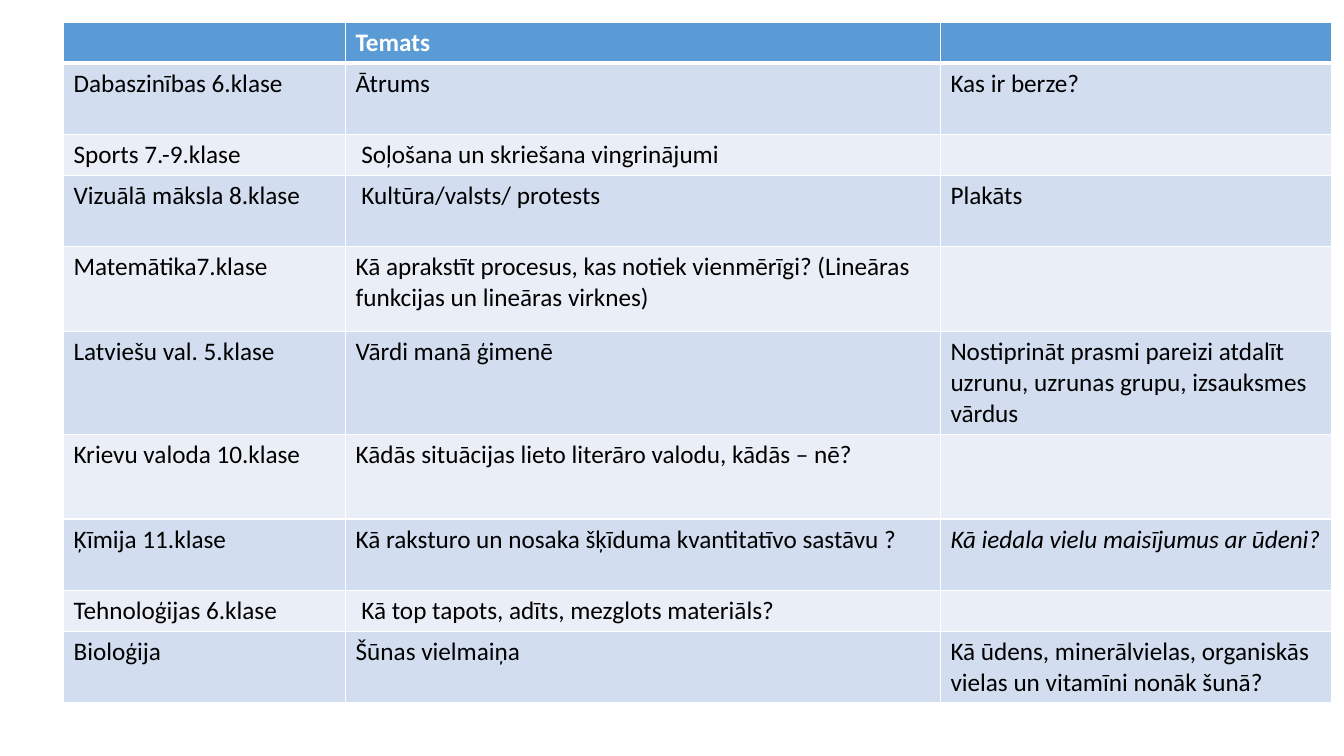
from lxml import etree
from pptx import Presentation
from pptx.dml.color import RGBColor
from pptx.oxml.ns import qn
from pptx.util import Cm, Pt

HEADER = ("", "Temats", "")
TOPICS = [
    ("Dabaszinības 6.klase", "Ātrums", "Kas ir berze?"),
    ("Sports 7.-9.klase", " Soļošana un skriešana vingrinājumi", ""),
    ("Vizuālā māksla 8.klase", " Kultūra/valsts/ protests", "Plakāts"),
    ("Matemātika7.klase",
     "Kā aprakstīt procesus, kas notiek vienmērīgi? (Lineāras funkcijas un lineāras virknes)", ""),
    ("Latviešu val. 5.klase", "Vārdi manā ģimenē",
     "Nostiprināt prasmi pareizi atdalīt uzrunu, uzrunas grupu, izsauksmes vārdus"),
    ("Krievu valoda 10.klase", "Kādās situācijas lieto literāro valodu, kādās – nē?", ""),
    ("Ķīmija 11.klase", "Kā raksturo un nosaka šķīduma kvantitatīvo sastāvu ?",
     "Kā iedala vielu maisījumus ar ūdeni?"),
    ("Tehnoloģijas 6.klase", " Kā top tapots, adīts, mezglots materiāls?", ""),
    ("Bioloģija", "Šūnas vielmaiņa",
     "Kā ūdens, minerālvielas, organiskās vielas un vitamīni nonāk šunā?"),
]
ITALIC_CELL = (7, 2)

# Lengths in centimetres
LEFT, TOP = 1.6, 0.56
COLUMN_WIDTHS = (7.11, 14.99, 9.86)
ROW_HEIGHTS = (1.03, 1.8, 1.03, 1.8, 2.14, 2.57, 2.14, 1.8, 1.03, 1.8)

THEME = {
    "font": "Calibri", "size": 18,
    "header": "5B9BD5", "bands": ("D2DEEF", "EAEFF7"),
    "header_text": "FFFFFF", "text": "000000",
    "border": "FFFFFF", "thin": 1, "thick": 3,
}


def add_border(cell, side, points):
    line = etree.SubElement(cell._tc.get_or_add_tcPr(), qn("a:" + side), w=str(Pt(points)))
    fill = etree.SubElement(line, qn("a:solidFill"))
    etree.SubElement(fill, qn("a:srgbClr"), val=THEME["border"])


def style_cell(cell, text, row, column):
    is_header = row == 0
    thick_side = {0: "lnB", 1: "lnT"}.get(row)
    for side in ("lnL", "lnR", "lnT", "lnB"):
        add_border(cell, side, THEME["thick" if side == thick_side else "thin"])

    cell.fill.solid()
    color = THEME["header"] if is_header else THEME["bands"][(row - 1) % 2]
    cell.fill.fore_color.rgb = RGBColor.from_string(color)

    cell.text_frame.text = text
    font = cell.text_frame.paragraphs[0].font
    spans = cell.text_frame.paragraphs[0].runs
    for font in [font] + [span.font for span in spans]:
        font.name = THEME["font"]
        font.size = Pt(THEME["size"])
        font.bold = is_header
        font.italic = (row, column) == ITALIC_CELL
        font.color.rgb = RGBColor.from_string(THEME["header_text" if is_header else "text"])


def main():
    deck = Presentation()
    deck.slide_width, deck.slide_height = Cm(33.87), Cm(19.05)
    page = deck.slides.add_slide(deck.slide_layouts[6])

    # Table of subjects and topics
    rows = [HEADER] + TOPICS
    table = page.shapes.add_table(
        len(rows), len(HEADER), Cm(LEFT), Cm(TOP),
        Cm(sum(COLUMN_WIDTHS)), Cm(sum(ROW_HEIGHTS))).table
    for column, width in zip(table.columns, COLUMN_WIDTHS):
        column.width = Cm(width)
    for row, height in zip(table.rows, ROW_HEIGHTS):
        row.height = Cm(height)

    # Cell text, fills and borders
    for row, texts in enumerate(rows):
        for column, text in enumerate(texts):
            style_cell(table.cell(row, column), text, row, column)

    deck.save("out.pptx")


if __name__ == "__main__":
    main()
